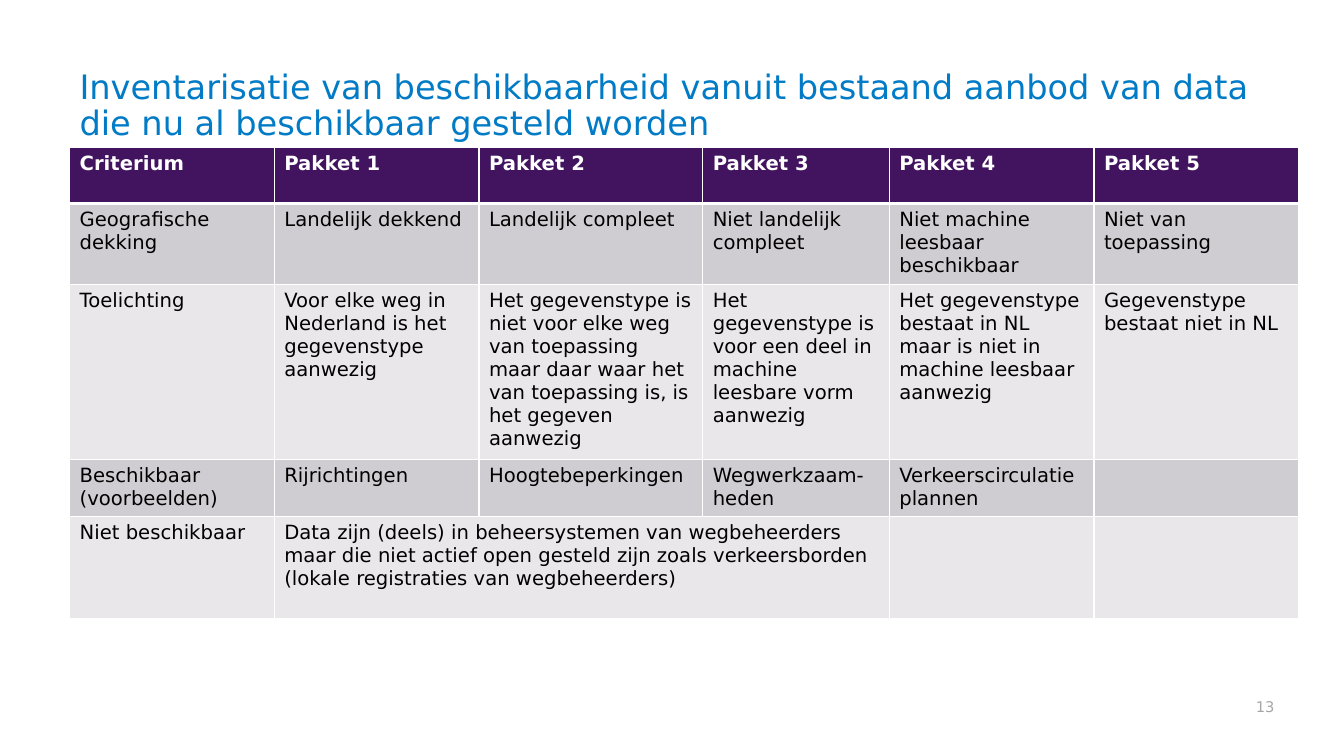
from lxml.etree import SubElement
from pptx import Presentation
from pptx.dml.color import RGBColor
from pptx.enum.text import MSO_ANCHOR, PP_ALIGN
from pptx.oxml.ns import qn
from pptx.util import Inches, Pt

COL_WIDTHS = [2.03, 2.03, 2.22, 1.85, 2.03, 2.03]
ROW_HEIGHTS = [0.56, 0.78, 1.7, 0.56, 1.01]
ROWS = [
    ["Criterium"] + [f"Pakket {n}" for n in range(1, 6)],
    ["Geografische dekking", "Landelijk dekkend", "Landelijk compleet",
     "Niet landelijk compleet", "Niet machine leesbaar beschikbaar",
     "Niet van toepassing"],
    ["Toelichting",
     "Voor elke weg in Nederland is het gegevenstype aanwezig",
     "Het gegevenstype is niet voor elke weg van toepassing maar daar waar "
     "het van toepassing is, is het gegeven aanwezig",
     "Het gegevenstype is voor een deel in machine leesbare vorm aanwezig",
     "Het gegevenstype bestaat in NL maar is niet in machine leesbaar aanwezig",
     "Gegevenstype bestaat niet in NL"],
    ["Beschikbaar (voorbeelden)", "Rijrichtingen", "Hoogtebeperkingen",
     "Wegwerkzaam-\nheden", "Verkeerscirculatieplannen", ""],
    ["Niet beschikbaar",
     "Data zijn (deels) in beheersystemen van wegbeheerders maar die niet "
     "actief open gesteld zijn zoals verkeersborden (lokale registraties van "
     "wegbeheerders)", "", "", "", ""],
]


def rgb(value):
    return RGBColor.from_string(value)


class SlideBuilder:
    font = "DejaVu Sans"
    header_fill = "42145F"
    band_fills = ["E9E7EA", "CFCCD2"]
    border = "FFFFFF"

    def __init__(self, prs):
        self.s = prs.slides.add_slide(prs.slide_layouts[6])

    def style(self, p, size, color, bold=False):
        for name, value in {"name": self.font, "size": Pt(size), "bold": bold}.items():
            setattr(p.font, name, value)
        p.font.color.rgb = rgb(color)

    def text(self, box, text, size, color, frame, para):
        sp = self.s.shapes.add_textbox(*map(Inches, box))
        tf = sp.text_frame
        tf.text = text
        p = tf.paragraphs[0]
        frame = {"word_wrap": True, "vertical_anchor": MSO_ANCHOR.BOTTOM, **frame}
        for target, values in ((tf, frame), (p, para)):
            for name, value in values.items():
                setattr(target, name, value)
        self.style(p, size, color)

    def borders(self, cell, widths):
        tc_pr = cell._tc.get_or_add_tcPr()
        for side, width in widths.items():
            ln = SubElement(tc_pr, qn(f"a:ln{side}"), w=str(Pt(width)))
            fill = SubElement(ln, qn("a:solidFill"))
            SubElement(fill, qn("a:srgbClr"), val=self.border)

    def cell(self, cell, text, row):
        header = row == 0
        self.borders(cell, {"L": 1, "R": 1, "T": 3 if row == 1 else 1,
                            "B": 3 if header else 1})
        cell.fill.solid()
        cell.fill.fore_color.rgb = rgb(
            self.header_fill if header else self.band_fills[row % 2])
        cell.text = text
        for p in cell.text_frame.paragraphs:
            self.style(p, 14, "FFFFFF" if header else "000000", header)

    def table(self, left, top, widths, heights, rows):
        table = self.s.shapes.add_table(
            len(rows), len(widths), Inches(left), Inches(top),
            Inches(sum(widths)), Inches(sum(heights))).table
        for col, width in zip(table.columns, widths):
            col.width = Inches(width)
        for r, (height, texts) in enumerate(zip(heights, rows)):
            table.rows[r].height = Inches(height)
            for c, text in enumerate(texts):
                self.cell(table.cell(r, c), text, r)
        return table


def main():
    prs = Presentation()
    prs.slide_width = Inches(13.33)
    prs.slide_height = Inches(7.5)
    slide = SlideBuilder(prs)
    slide.text((0.69, 0.43, 11.95, 1.04),
               "Inventarisatie van beschikbaarheid vanuit bestaand aanbod van "
               "data die nu al beschikbaar gesteld worden",
               24, "017BC6", {}, {"line_spacing": 0.9})
    slide.text((7.17, 6.8, 5.47, 0.35), "13", 10.5, "A6A6A6",
               {"margin_right": 0}, {"alignment": PP_ALIGN.RIGHT})
    table = slide.table(0.69, 1.46, COL_WIDTHS, ROW_HEIGHTS, ROWS)
    table.cell(4, 1).merge(table.cell(4, 3))
    prs.save("out.pptx")


if __name__ == "__main__":
    main()
